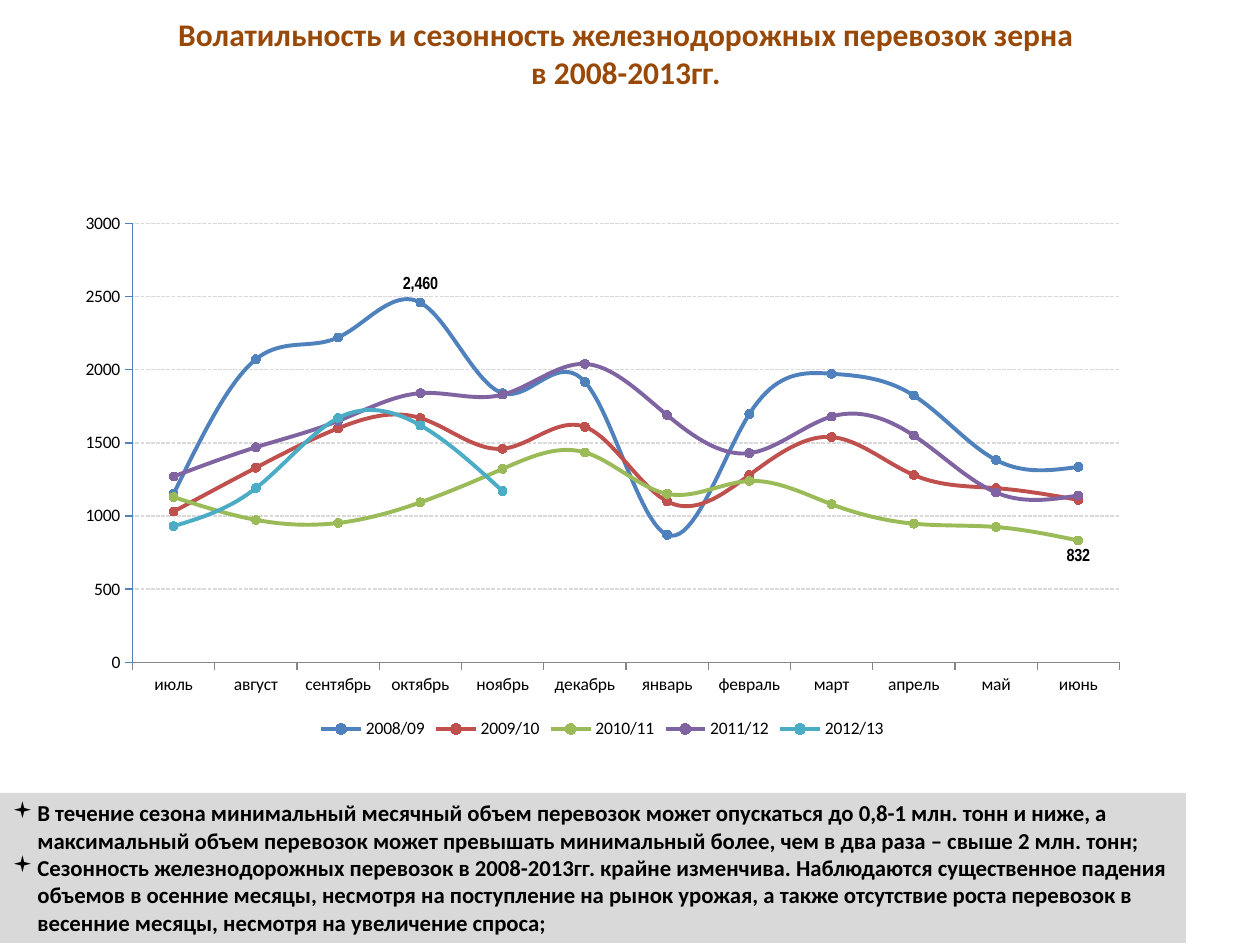
from lxml import etree
from pptx import Presentation
from pptx.chart.data import CategoryChartData
from pptx.dml.color import RGBColor
from pptx.enum.chart import XL_CHART_TYPE as ChartType
from pptx.enum.chart import XL_LABEL_POSITION as LabelPosition
from pptx.enum.chart import XL_LEGEND_POSITION as LegendPosition
from pptx.enum.chart import XL_MARKER_STYLE as MarkerStyle
from pptx.enum.chart import XL_TICK_MARK as TickMark
from pptx.enum.dml import MSO_LINE_DASH_STYLE as DashStyle
from pptx.enum.shapes import MSO_SHAPE as ShapeKind
from pptx.enum.text import MSO_ANCHOR as Anchor
from pptx.enum.text import MSO_AUTO_SIZE as AutoSize
from pptx.enum.text import PP_ALIGN as Align
from pptx.oxml.ns import qn
from pptx.util import Pt

PX = 914400 / 126
BROWN = RGBColor(0x98, 0x48, 0x07)
BLACK = RGBColor(0, 0, 0)
LIGHT_GREY = RGBColor(0xD9, 0xD9, 0xD9)
AXIS_GREY = RGBColor(0x86, 0x86, 0x86)
BLUE = RGBColor(0x4F, 0x81, 0xBD)
RED = RGBColor(0xC0, 0x50, 0x4D)
GREEN = RGBColor(0x9B, 0xBB, 0x59)
PURPLE = RGBColor(0x80, 0x64, 0xA2)
TEAL = RGBColor(0x4B, 0xAC, 0xC6)

TITLE = ["Волатильность и сезонность железнодорожных перевозок зерна", "в 2008-2013гг."]
NOTES = [
    "В течение сезона минимальный месячный объем перевозок может опускаться до 0,8-1 млн. тонн и ниже, а "
    "максимальный объем перевозок может превышать минимальный более, чем в два раза – свыше 2 млн. тонн;",
    "Сезонность железнодорожных перевозок в 2008-2013гг. крайне изменчива. Наблюдаются существенное падения "
    "объемов в осенние месяцы, несмотря на поступление на рынок урожая, а также отсутствие роста перевозок в "
    "весенние месяцы, несмотря на увеличение спроса;",
]
MONTHS = ["июль", "август", "сентябрь", "октябрь", "ноябрь", "декабрь",
          "январь", "февраль", "март", "апрель", "май", "июнь"]
SEASONS = [
    ("2008/09", BLUE, [1151, 2072, 2221, 2460, 1840, 1918, 871, 1697, 1973, 1824, 1383, 1336]),
    ("2009/10", RED, [1030, 1330, 1600, 1670, 1460, 1610, 1100, 1280, 1540, 1280, 1190, 1110]),
    ("2010/11", GREEN, [1129, 973, 952, 1093, 1322, 1435, 1151, 1239, 1080, 947, 924, 832]),
    ("2011/12", PURPLE, [1270, 1470, 1650, 1840, 1830, 2040, 1690, 1430, 1680, 1550, 1160, 1140]),
    ("2012/13", TEAL, [930, 1190, 1670, 1620, 1170] + [None] * 7),
]
PEAK = (0, 3, LabelPosition.ABOVE)
LOW = (2, 11, LabelPosition.BELOW)


def emu(*lengths):
    return [round(length * PX) for length in lengths]


def style_font(font, size, color, bold=False, name="Calibri"):
    font.name = name
    font.size = Pt(size)
    font.bold = bold
    font.color.rgb = color


def place_title(page, box):
    title = page.shapes.title
    title.left, title.top, title.width, title.height = emu(*box)
    frame = title.text_frame
    frame.text = "\n".join(TITLE)
    frame.word_wrap = True
    frame.auto_size = AutoSize.NONE
    frame.vertical_anchor = Anchor.TOP
    for para in frame.paragraphs:
        para.alignment = Align.CENTER
        for span in para.runs:
            style_font(span.font, 18, BROWN, True)


def format_axes(chart):
    months = chart.category_axis
    months.major_tick_mark = TickMark.OUTSIDE
    months.format.line.color.rgb = AXIS_GREY
    volumes = chart.value_axis
    volumes.minimum_scale, volumes.maximum_scale, volumes.major_unit = 0, 3000, 500
    volumes.major_tick_mark = TickMark.OUTSIDE
    volumes.format.line.color.rgb = BLUE
    volumes.format.line.width = Pt(0.75)
    grid = volumes.major_gridlines.format.line
    grid.color.rgb = LIGHT_GREY
    grid.width = Pt(0.75)
    grid.dash_style = DashStyle.SQUARE_DOT


def label_point(series, index, position):
    series.data_labels.show_value = False
    label = series.points[index].data_label
    style_font(label.font, 10, BLACK, True, "Arial Narrow")
    label.position = position
    for element in series.data_labels._element.findall(qn("c:dLbl")):
        number_format = etree.Element(qn("c:numFmt"), formatCode="#,##0", sourceLinked="0")
        element.insert(1, number_format)


def place_chart(page, box):
    data = CategoryChartData()
    data.categories = MONTHS
    for name, color, volumes in SEASONS:
        data.add_series(name, volumes)
    chart = page.shapes.add_chart(ChartType.LINE_MARKERS, *emu(*box), data).chart
    chart.has_title = False
    style_font(chart.font, 10, BLACK)
    chart.has_legend = True
    chart.legend.position = LegendPosition.BOTTOM
    chart.legend.include_in_layout = False
    format_axes(chart)
    plot = chart.plots[0]
    plot.vary_by_categories = False
    for series, (name, color, volumes) in zip(plot.series, SEASONS):
        series.smooth = True
        series.format.line.color.rgb = color
        series.format.line.width = Pt(2.25)
        marker = series.marker
        marker.style = MarkerStyle.CIRCLE
        marker.size = 5
        marker.format.fill.solid()
        marker.format.fill.fore_color.rgb = color
        marker.format.line.color.rgb = color
    for season, index, position in (PEAK, LOW):
        label_point(plot.series[season], index, position)


def place_notes(page, box):
    panel = page.shapes.add_shape(ShapeKind.RECTANGLE, *emu(*box))
    panel.shadow.inherit = False
    panel.fill.solid()
    panel.fill.fore_color.rgb = LIGHT_GREY
    panel.line.fill.background()
    frame = panel.text_frame
    frame.word_wrap = True
    frame.vertical_anchor = Anchor.TOP
    frame.text = "\n".join(NOTES)
    indent = emu(25)[0]
    for para in frame.paragraphs:
        para.alignment = Align.LEFT
        properties = para._p.get_or_add_pPr()
        properties.set("marL", str(indent))
        properties.set("indent", str(-indent))
        etree.SubElement(properties, qn("a:buFont"), typeface="Wingdings")
        etree.SubElement(properties, qn("a:buChar"), char="▪")
        for span in para.runs:
            style_font(span.font, 13, BLACK, True)


def main():
    deck = Presentation()
    deck.slide_width, deck.slide_height = emu(1260, 945)
    page = deck.slides.add_slide(deck.slide_layouts[5])
    place_title(page, (64, 9, 1124, 89))
    place_notes(page, (0, 793, 1186, 150))
    place_chart(page, (64, 203, 1077, 541))
    deck.save("out.pptx")


if __name__ == "__main__":
    main()
